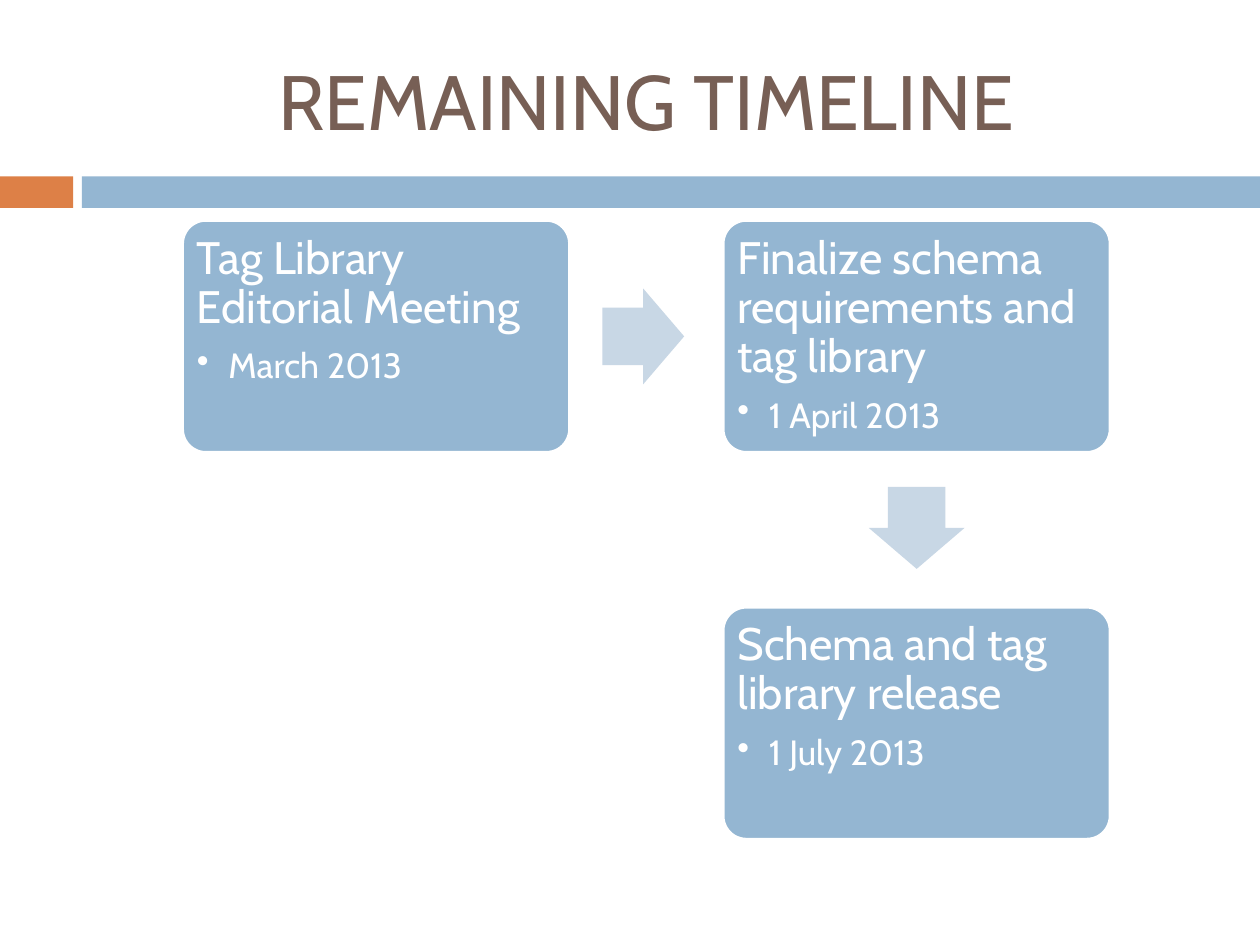
from pptx import Presentation
from pptx.dml.color import RGBColor
from pptx.enum import shapes, text
from pptx.oxml import parse_xml
from pptx.oxml.ns import nsdecls
from pptx.util import Inches, Pt

FONT = "Cabin"
BROWN = RGBColor(0x77, 0x5F, 0x55)
ORANGE = RGBColor(0xDD, 0x80, 0x47)
BLUE = RGBColor(0x94, 0xB6, 0xD2)
PALE = RGBColor(0xC8, 0xD7, 0xE5)
WHITE = RGBColor(0xFF, 0xFF, 0xFF)
KIND = shapes.MSO_SHAPE
LEFT, RIGHT = 1.45, 5.74
TOP, LOW = 1.75, 4.82
WIDE, HIGH = 3.07, 1.84
STEPS = [
    (LEFT, TOP, "Tag Library Editorial Meeting", "March 2013"),
    (RIGHT, TOP, "Finalize schema requirements and tag library", "1 April 2013"),
    (RIGHT, LOW, "Schema and tag library release", "1 July 2013"),
]


def write(para, words, size, color=WHITE, align=text.PP_ALIGN.LEFT,
          line=1.0, after=0, bullet=False):
    """Fill a paragraph with formatted words."""
    run = para.add_run()
    run.text = words
    run.font.name, run.font.size = FONT, Pt(size)
    run.font.color.rgb = color
    para.alignment, para.line_spacing = align, line
    para.space_after = Pt(after)
    if bullet:
        para.level = 1
        props = para._p.get_or_add_pPr()
        props.set("marL", str(Inches(0.25)))
        props.set("indent", str(Inches(-0.25)))
        props.append(parse_xml(f'<a:buChar {nsdecls("a")} char="•"/>'))


def shape(slide, kind, box, fill, line=None, adjust=()):
    """Add a flat preset shape."""
    item = slide.shapes.add_shape(kind, *map(Inches, box))
    item.shadow.inherit = False
    item.fill.solid()
    item.fill.fore_color.rgb = fill
    if line is None:
        item.line.fill.background()
    else:
        item.line.color.rgb, item.line.width = line, Pt(1.5)
    for i, value in enumerate(adjust):
        item.adjustments[i] = value
    return item


def title(slide, words):
    """Add the centred slide title."""
    box = slide.shapes.add_textbox(*map(Inches, (0.67, 0.25, 8.92, 1.08)))
    frame = box.text_frame
    frame.word_wrap = True
    frame.vertical_anchor = text.MSO_ANCHOR.MIDDLE
    write(frame.paragraphs[0], words, 44, BROWN, text.PP_ALIGN.CENTER)


def card(slide, left, top, head, date):
    """Add a step with its heading and date."""
    item = shape(slide, KIND.ROUNDED_RECTANGLE, (left, top, WIDE, HIGH),
                 BLUE, WHITE, [0.1])
    frame = item.text_frame
    frame.word_wrap = True
    frame.vertical_anchor = text.MSO_ANCHOR.TOP
    for side in ("left", "top", "right", "bottom"):
        setattr(frame, f"margin_{side}", Inches(0.06))
    write(frame.paragraphs[0], head, 26, line=0.9, after=9)
    write(frame.add_paragraph(), date, 20, line=0.9, after=3, bullet=True)


def arrow(slide, left, top, turn=0):
    """Add a block arrow between two steps."""
    item = shape(slide, KIND.RIGHT_ARROW, (left, top, 0.65, 0.76),
                 PALE, adjust=[0.6, 0.5])
    item.rotation = turn


def main():
    """Build the timeline slide."""
    deck = Presentation()
    deck.slide_width, deck.slide_height = Inches(10), Inches(7.5)
    slide = deck.slides.add_slide(deck.slide_layouts[6])
    shape(slide, KIND.RECTANGLE, (0, 1.4, 0.58, 0.25), ORANGE)
    shape(slide, KIND.RECTANGLE, (0.65, 1.4, 9.35, 0.25), BLUE)
    title(slide, "REMAINING TIMELINE")
    for step in STEPS:
        card(slide, *step)
    arrow(slide, 4.78, 2.29)
    arrow(slide, 6.95, 3.81, 90)
    deck.save("out.pptx")


if __name__ == "__main__":
    main()
